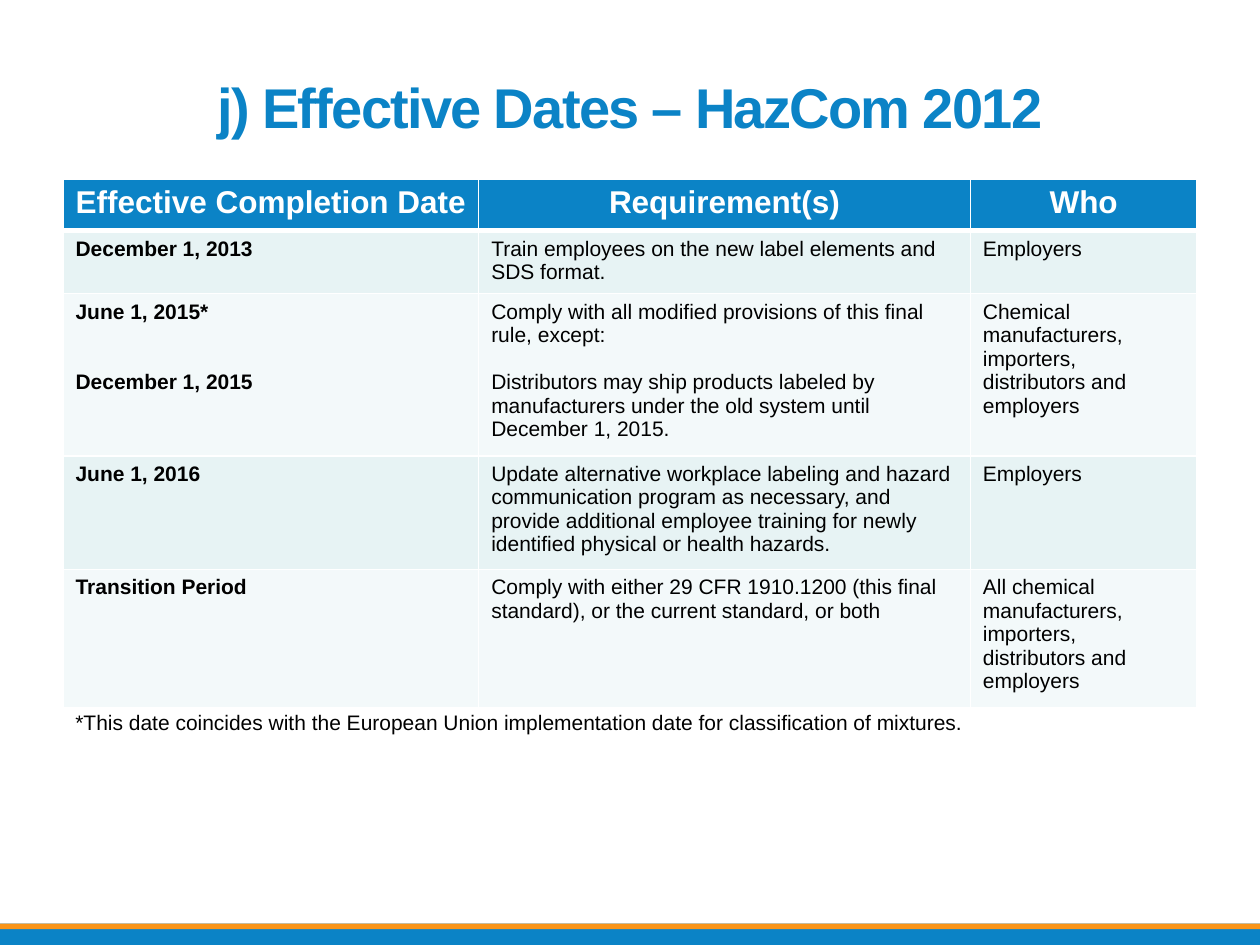
from pptx import Presentation
from pptx.dml.color import RGBColor
from pptx.enum.shapes import MSO_SHAPE
from pptx.enum.text import MSO_ANCHOR, PP_ALIGN
from pptx.oxml import parse_xml
from pptx.oxml.ns import nsdecls
from pptx.util import Cm, Pt

COLORS = {
    "blue": "0B83C6",
    "orange": "F99419",
    "white": "FFFFFF",
    "black": "000000",
    "odd_row": "E7F3F4",
    "even_row": "F3F9FA",
}
LINE = 13.5
LEFT, WIDTH = 1.27, 22.86
COLUMN_WIDTHS = (8.38, 9.91, 4.57)
ROW_HEIGHT = 1.04

HEADINGS = ("Effective Completion Date", "Requirement(s)", "Who")
DEADLINES = (
    (
        "December 1, 2013",
        "Train employees on the new label elements and SDS format.",
        "Employers",
    ),
    (
        "June 1, 2015*\nDecember 1, 2015",
        "Comply with all modified provisions of this final rule, except:\n"
        "Distributors may ship products labeled by manufacturers under the old "
        "system until December 1, 2015.",
        "Chemical manufacturers, importers, distributors and employers",
    ),
    (
        "June 1, 2016",
        "Update alternative workplace labeling and hazard communication program "
        "as necessary, and provide additional employee training for newly "
        "identified physical or health hazards.",
        "Employers",
    ),
    (
        "Transition Period",
        "Comply with either 29 CFR 1910.1200 (this final standard), or the "
        "current standard, or both",
        "All chemical manufacturers, importers, distributors and employers",
    ),
)


def write(frame, text, size=12, color="black", bold=False,
          align=PP_ALIGN.LEFT, gap=0, tracking=None):
    frame.word_wrap = True
    for index, line in enumerate(text.split("\n")):
        paragraph = frame.add_paragraph() if index else frame.paragraphs[0]
        paragraph.alignment = align
        if index:
            paragraph.space_before = Pt(gap)
        run = paragraph.add_run()
        run.text = line
        run.font.name = "Arial"
        run.font.size = Pt(size)
        run.font.bold = bold
        run.font.color.rgb = RGBColor.from_string(COLORS[color])
        if tracking is not None:
            run._r.get_or_add_rPr().set("spc", str(tracking * 100))


class SlideBuilder:
    def __init__(self, slide, colors):
        self.slide = slide
        self.colors = colors

    def paint(self, fill, color):
        fill.solid()
        fill.fore_color.rgb = RGBColor.from_string(self.colors[color])

    def band(self, top, height, color):
        stripe = self.slide.shapes.add_shape(
            MSO_SHAPE.RECTANGLE, 0, Cm(top), Cm(25.4), Cm(height))
        stripe.shadow.inherit = False
        stripe.line.fill.background()
        self.paint(stripe.fill, color)

    def text(self, top, height, words, anchor=MSO_ANCHOR.TOP, **style):
        frame = self.slide.shapes.add_textbox(
            Cm(LEFT), Cm(top), Cm(WIDTH), Cm(height)).text_frame
        frame.vertical_anchor = anchor
        write(frame, words, **style)

    def cell(self, cell, words, fill, top=1, bottom=1, **style):
        properties = cell._tc.get_or_add_tcPr()
        for side, points in (("L", 1), ("R", 1), ("T", top), ("B", bottom)):
            properties.append(parse_xml(
                f'<a:ln{side} {nsdecls("a")} w="{Pt(points)}"><a:solidFill>'
                f'<a:srgbClr val="{self.colors["white"]}"/>'
                f'</a:solidFill></a:ln{side}>'))
        self.paint(cell.fill, fill)
        write(cell.text_frame, words, **style)

    def table(self, top, headings, records):
        rows = len(records) + 1
        schedule = self.slide.shapes.add_table(
            rows, len(headings), Cm(LEFT), Cm(top), Cm(WIDTH),
            Cm(ROW_HEIGHT * rows)).table
        for column, width in zip(schedule.columns, COLUMN_WIDTHS):
            column.width = Cm(width)
        for column, heading in enumerate(headings):
            self.cell(schedule.cell(0, column), heading, "blue", bottom=3,
                      size=18, color="white", bold=True, align=PP_ALIGN.CENTER)
        for row, record in enumerate(records, 1):
            for column, words in enumerate(record):
                is_date = column == 0
                self.cell(schedule.cell(row, column), words,
                          "odd_row" if row % 2 else "even_row",
                          top=3 if row == 1 else 1, bold=is_date,
                          gap=LINE * 2 if is_date else LINE)


def main():
    presentation = Presentation()
    presentation.slide_width = Cm(25.4)
    presentation.slide_height = Cm(19.05)
    slide = presentation.slides.add_slide(presentation.slide_layouts[6])
    builder = SlideBuilder(slide, COLORS)
    builder.paint(slide.background.fill, "white")
    builder.band(18.62, 0.43, "blue")
    builder.band(18.62, 0.11, "orange")
    builder.text(1.47, 1.47, "j) Effective Dates – HazCom 2012",
                 anchor=MSO_ANCHOR.BOTTOM, size=32, color="blue", bold=True,
                 align=PP_ALIGN.CENTER, tracking=-1)
    builder.table(3.61, HEADINGS, DEADLINES)
    builder.text(14.17, 0.76, "*This date coincides with the European Union "
                 "implementation date for classification of mixtures.")
    presentation.save("out.pptx")


if __name__ == "__main__":
    main()
